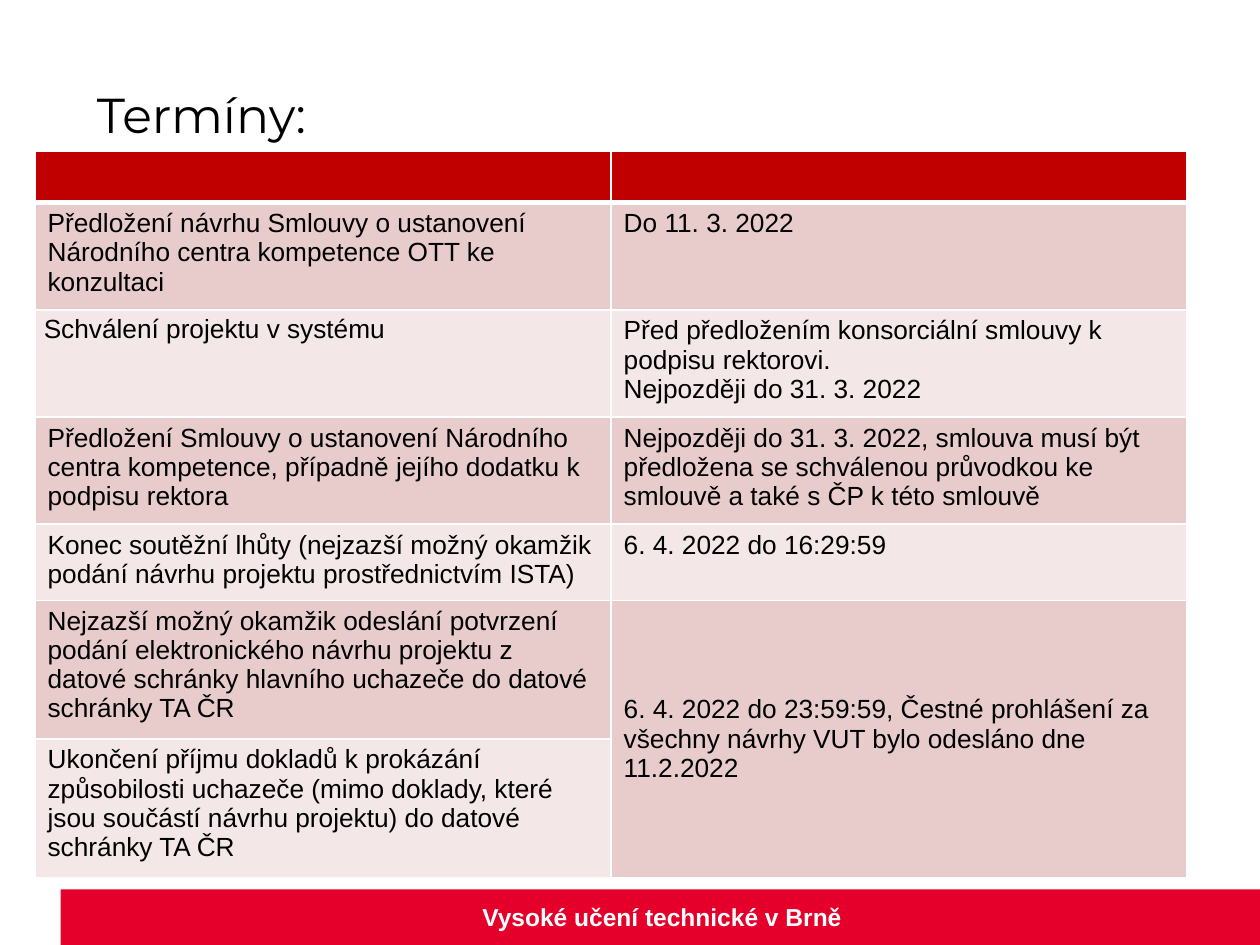
"""Build the project deadlines slide with its two-column table."""
from dataclasses import dataclass

from lxml.etree import SubElement
from pptx import Presentation
from pptx.dml.color import RGBColor
from pptx.enum.shapes import MSO_SHAPE
from pptx.enum.text import MSO_ANCHOR, PP_ALIGN
from pptx.oxml.ns import qn
from pptx.util import Pt


@dataclass(frozen=True)
class Theme:
    text: str = "000000"
    white: str = "FFFFFF"
    header: str = "C00000"
    bands: tuple = ("E8CCCC", "F4E7E7")
    footer: str = "E4002B"
    title_font: str = "Montserrat"
    body_font: str = "Arial"
    title_size: int = 28
    body_size: int = 15
    footer_size: int = 14


THEME = Theme()
TITLE = "Termíny:"
FOOTER = "Vysoké učení technické v Brně"
DEADLINES = [
    (["Předložení návrhu Smlouvy o ustanovení Národního centra kompetence OTT ke konzultaci"],
     ["Do 11. 3. 2022"]),
    (["Schválení projektu v systému"],
     ["Před předložením konsorciální smlouvy k podpisu rektorovi.",
      "Nejpozději do 31. 3. 2022"]),
    (["Předložení Smlouvy o ustanovení Národního centra kompetence, případně jejího dodatku "
      "k podpisu rektora"],
     ["Nejpozději do 31. 3. 2022, smlouva musí být předložena se schválenou průvodkou "
      "ke smlouvě a také s ČP k této smlouvě"]),
    (["Konec soutěžní lhůty (nejzazší možný okamžik podání návrhu projektu prostřednictvím ISTA)"],
     ["6. 4. 2022 do 16:29:59"]),
    (["Nejzazší možný okamžik odeslání potvrzení podání elektronického návrhu projektu "
      "z datové schránky hlavního uchazeče do datové schránky TA ČR"],
     ["6. 4. 2022 do 23:59:59, Čestné prohlášení za všechny návrhy VUT bylo odesláno dne "
      "11.2.2022"]),
    (["Ukončení příjmu dokladů k prokázání způsobilosti uchazeče (mimo doklady, které jsou "
      "součástí návrhu projektu) do datové schránky TA ČR"],
     []),
]
ROW_HEIGHTS = [29.5, 61, 61, 61, 43.5, 79, 79]
COLUMN_WIDTH = 329.2


def write_run(paragraph, text, font_name, size, color, bold=False):
    run = paragraph.add_run()
    run.text = text
    run.font.name = font_name
    run.font.size = Pt(size)
    run.font.bold = bold
    run.font.color.rgb = RGBColor.from_string(color)


def set_borders(cell, top=1, bottom=1):
    properties = cell._tc.get_or_add_tcPr()
    for side, width in (("L", 1), ("R", 1), ("T", top), ("B", bottom)):
        line = SubElement(properties, qn(f"a:ln{side}"), w=str(Pt(width)))
        fill = SubElement(line, qn("a:solidFill"))
        SubElement(fill, qn("a:srgbClr"), val=THEME.white)


def set_fill(target, color):
    target.fill.solid()
    target.fill.fore_color.rgb = RGBColor.from_string(color)


def add_title(slide):
    title = slide.shapes.title
    title.left, title.top, title.width, title.height = Pt(48.2), Pt(44.6), Pt(578), Pt(41)
    title.text_frame.vertical_anchor = MSO_ANCHOR.MIDDLE
    paragraph = title.text_frame.paragraphs[0]
    paragraph.alignment = PP_ALIGN.LEFT
    write_run(paragraph, TITLE, THEME.title_font, THEME.title_size, THEME.text)


def add_footer(slide):
    bar = slide.shapes.add_shape(MSO_SHAPE.RECTANGLE, Pt(34.6), Pt(508.2), Pt(685.4), Pt(31.8))
    bar.shadow.inherit = False
    set_fill(bar, THEME.footer)
    bar.line.fill.background()
    label = slide.shapes.add_textbox(Pt(36.7), Pt(512), Pt(683.3), Pt(24.2))
    label.text_frame.word_wrap = True
    paragraph = label.text_frame.paragraphs[0]
    paragraph.alignment = PP_ALIGN.CENTER
    write_run(paragraph, FOOTER, THEME.body_font, THEME.footer_size, THEME.white, bold=True)


def add_deadlines(slide):
    rows = [([], [])] + DEADLINES
    table = slide.shapes.add_table(
        len(rows), 2, Pt(20), Pt(86.4), Pt(2 * COLUMN_WIDTH), Pt(sum(ROW_HEIGHTS))).table
    table.first_row = table.horz_banding = False
    for column in table.columns:
        column.width = Pt(COLUMN_WIDTH)
    for row_index, (row, height) in enumerate(zip(rows, ROW_HEIGHTS)):
        table.rows[row_index].height = Pt(height)
        color = THEME.bands[(row_index - 1) % 2] if row_index else THEME.header
        for column_index, lines in enumerate(row):
            cell = table.cell(row_index, column_index)
            set_borders(cell, top=3 if row_index == 1 else 1, bottom=1 if row_index else 3)
            set_fill(cell, color)
            for line_index, line in enumerate(lines):
                frame = cell.text_frame
                paragraph = frame.add_paragraph() if line_index else frame.paragraphs[0]
                write_run(paragraph, line, THEME.body_font, THEME.body_size, THEME.text)

    approval = table.cell(2, 0)
    approval.margin_left = approval.margin_right = Pt(5)
    approval.margin_top = approval.margin_bottom = Pt(0)
    approval.text_frame.paragraphs[0].alignment = PP_ALIGN.JUSTIFY
    approval.text_frame.paragraphs[0].line_spacing = 1.15

    final_deadline = table.cell(5, 1)
    final_deadline.merge(table.cell(6, 1))
    final_deadline.vertical_anchor = MSO_ANCHOR.MIDDLE


def main():
    presentation = Presentation()
    presentation.slide_width, presentation.slide_height = Pt(720), Pt(540)
    slide = presentation.slides.add_slide(presentation.slide_layouts[5])
    add_footer(slide)
    add_title(slide)
    add_deadlines(slide)
    presentation.save("out.pptx")


if __name__ == "__main__":
    main()
